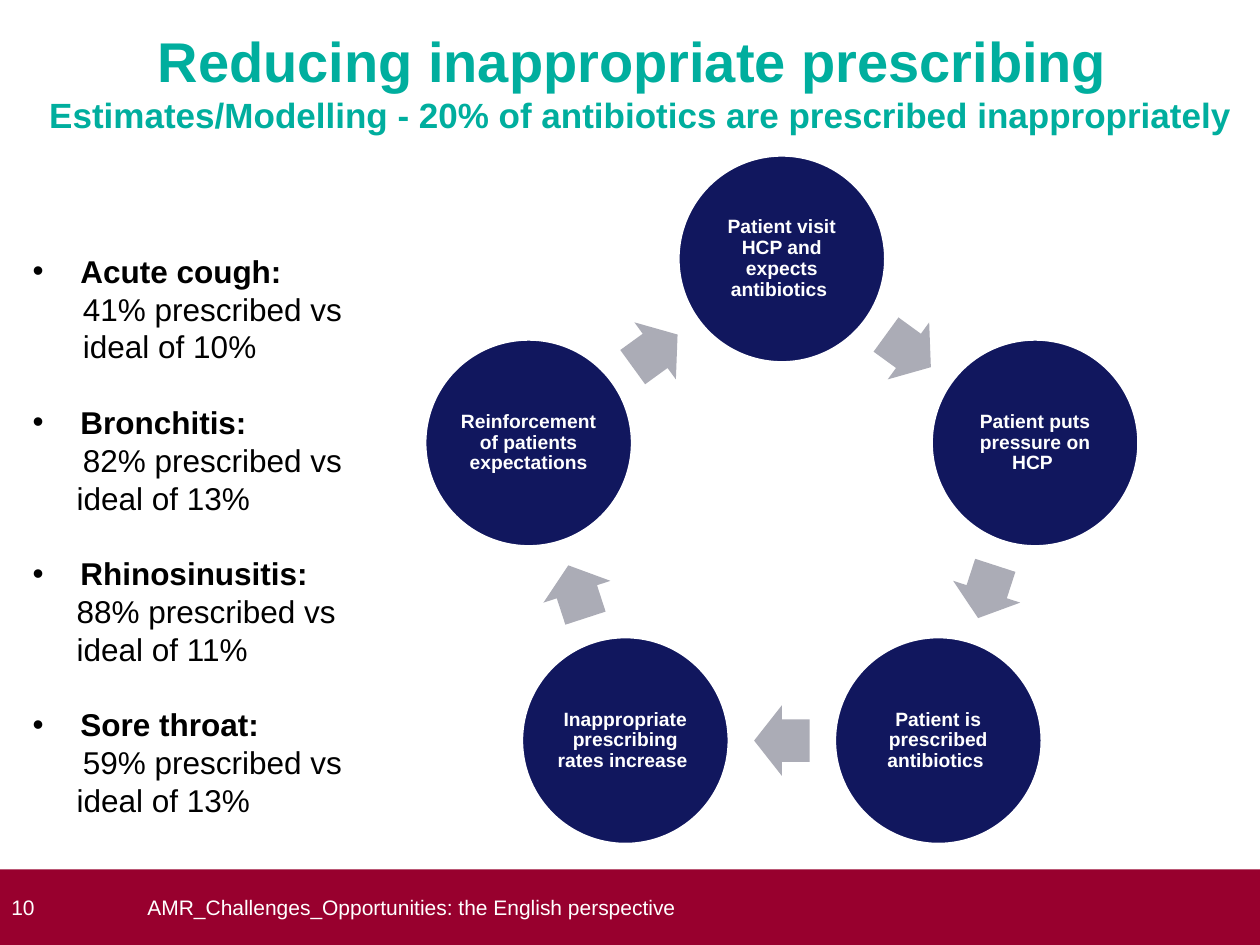
from math import cos, radians, sin

from lxml.etree import SubElement
from pptx import Presentation
from pptx.dml.color import RGBColor
from pptx.enum.shapes import MSO_SHAPE
from pptx.enum.text import MSO_ANCHOR, PP_ALIGN
from pptx.oxml.ns import qn
from pptx.util import Inches, Pt

COLS, ROWS = 100, 75
WIDTH, HEIGHT = Inches(10), Inches(7.5)
HUES = {
    "teal": "00AE9E",
    "navy": "11175E",
    "grey": "ABACB6",
    "red": "98002E",
    "white": "FFFFFF",
    "black": "000000",
}
STEPS = [
    "Patient visit HCP and expects antibiotics ",
    "Patient puts pressure on HCP ",
    "Patient is prescribed antibiotics ",
    "Inappropriate prescribing rates increase ",
    "Reinforcement of patients expectations",
]
CASES = [
    ("Acute cough:", "41% prescribed vs ideal of 10%", 4, 0),
    ("Bronchitis:", "82% prescribed vs ideal of 13%", 3.5, 0.5),
    ("Rhinosinusitis:", "88% prescribed vs ideal of 11%", 3.5, 0),
    ("Sore throat:", "59% prescribed vs ideal of 13%", 3.5, 0.5),
]
MID = (62.05, 41.68)
RING = 21.13
DISC = 16.5
ARROW = (4.4, 5.6)


def col(n):
    return round(WIDTH * n / COLS)


def row(n):
    return round(HEIGHT * n / ROWS)


def place(x, y, w, h):
    return col(x), row(y), col(w), row(h)


def tint(name):
    return RGBColor.from_string(HUES[name])


def set_frame(frame, pad, anchor=MSO_ANCHOR.MIDDLE):
    frame.word_wrap = True
    frame.vertical_anchor = anchor
    frame.margin_left = frame.margin_right = col(pad)
    frame.margin_top = frame.margin_bottom = row(pad)
    return frame


def add_run(para, text, size, hue, bold=False):
    run = para.add_run()
    run.text = text
    font = run.font
    font.name, font.size, font.bold = "Arial", Pt(size), bold
    font.color.rgb = tint(hue)


def indent(para, left, first=0, mark=None):
    props = para._p.get_or_add_pPr()
    props.set("marL", str(col(left)))
    props.set("indent", str(col(first)))
    if mark:
        SubElement(props, qn("a:buFont")).set("typeface", "Arial")
        SubElement(props, qn("a:buChar")).set("char", mark)


def add_form(slide, kind, area, hue):
    form = slide.shapes.add_shape(kind, *area)
    form.shadow.inherit = False
    form.fill.solid()
    form.fill.fore_color.rgb = tint(hue)
    form.line.fill.background()
    return form


def add_box(slide, area, pad, anchor):
    box = slide.shapes.add_textbox(*area)
    return set_frame(box.text_frame, pad, anchor)


def add_title(slide):
    frame = add_box(slide, place(1.7, 2.1, 98.3, 7.1), 0, MSO_ANCHOR.TOP)
    head, sub = frame.paragraphs[0], frame.add_paragraph()
    head.alignment = sub.alignment = PP_ALIGN.CENTER
    add_run(head, "Reducing inappropriate prescribing ", 32, "teal", True)
    add_run(sub, "Estimates/Modelling - 20% of antibiotics are prescribed inappropriately",
            20, "teal", True)


def spot(angle, reach, w, h):
    x = MID[0] + reach * sin(radians(angle))
    y = MID[1] - reach * cos(radians(angle))
    return place(x - w / 2, y - h / 2, w, h)


def add_step(slide, text, angle):
    disc = add_form(slide, MSO_SHAPE.OVAL, spot(angle, RING, DISC, DISC), "navy")
    disc.line.color.rgb = tint("white")
    disc.line.width = Pt(2)
    para = set_frame(disc.text_frame, 0.2).paragraphs[0]
    para.alignment = PP_ALIGN.CENTER
    para.line_spacing = 0.9
    add_run(para, text, 11, "white", True)


def add_arrow(slide, angle, reach):
    arrow = add_form(slide, MSO_SHAPE.RIGHT_ARROW, spot(angle, reach, *ARROW), "grey")
    arrow.adjustments[0] = 0.6
    arrow.adjustments[1] = 0.5
    arrow.rotation = angle


def add_cycle(slide):
    turn = 360 / len(STEPS)
    reach = RING * cos(radians(turn / 2))
    for i, text in enumerate(STEPS):
        add_step(slide, text, i * turn)
        add_arrow(slide, (i + 0.5) * turn, reach)


def add_cases(slide):
    frame = add_box(slide, place(1.6, 19.5, 26.8, 46.4), 1, MSO_ANCHOR.TOP)
    frame.margin_top = frame.margin_bottom = row(0.5)
    for i, (name, fact, left, first) in enumerate(CASES):
        head = frame.add_paragraph() if i else frame.paragraphs[0]
        if i:
            head.space_before = Pt(21.6)
        indent(head, 3.8, -3.8, "•")
        add_run(head, name, 18, "black", True)
        body = frame.add_paragraph()
        indent(body, left, first)
        add_run(body, fact, 18, "black")


def add_footer(slide):
    band = add_form(slide, MSO_SHAPE.RECTANGLE, place(0, 69, COLS, 6), "red")
    page = set_frame(band.text_frame, 0).paragraphs[0]
    page.alignment = PP_ALIGN.LEFT
    indent(page, 0.9)
    add_run(page, "10", 12, "white")
    note = add_box(slide, place(9.8, 69, 88.2, 6), 0, MSO_ANCHOR.MIDDLE).paragraphs[0]
    indent(note, 1.9)
    add_run(note, "AMR_Challenges_Opportunities: the English perspective", 12, "white")


def main():
    deck = Presentation()
    deck.slide_width, deck.slide_height = WIDTH, HEIGHT
    slide = deck.slides.add_slide(deck.slide_layouts[6])
    add_footer(slide)
    add_title(slide)
    add_cycle(slide)
    add_cases(slide)
    deck.save("out.pptx")


if __name__ == "__main__":
    main()
